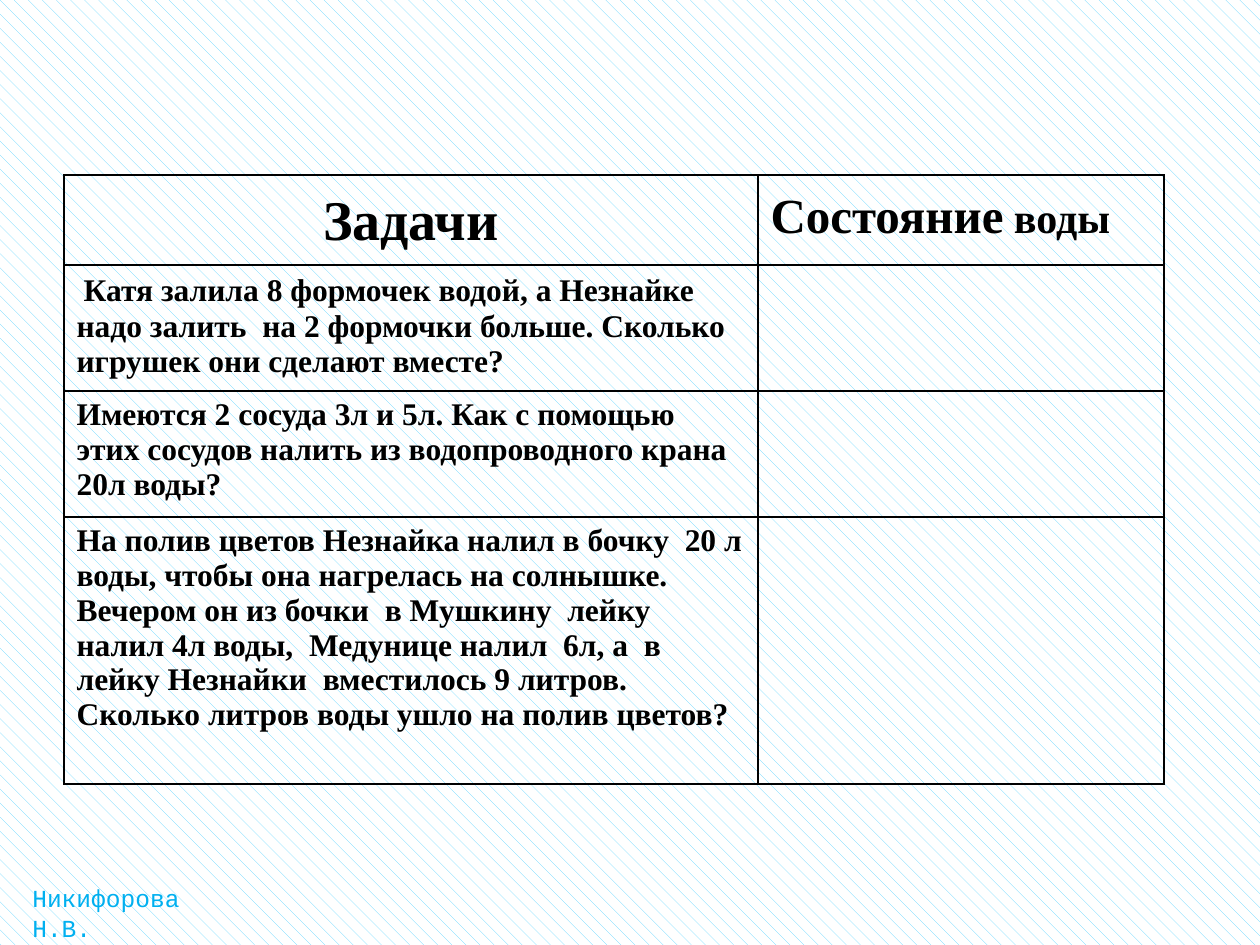
from lxml.etree import SubElement as Sub
from pptx import Presentation
from pptx.dml.color import RGBColor
from pptx.enum.dml import MSO_PATTERN
from pptx.enum.text import PP_ALIGN
from pptx.oxml import parse_xml
from pptx.oxml.ns import nsdecls, qn
from pptx.util import Pt

PX = 914400 // 126  # one px in EMU
TIMES, MONO = "Times New Roman", "Courier New"


def rgb(color):
    return RGBColor.from_string(color)


def add_run(para, text, size, face, color, bold):
    run = para.add_run()
    run.text = text
    look = {"size": Pt(size), "name": face, "bold": bold}
    for key, value in look.items():
        setattr(run.font, key, value)
    run.font.color.rgb = rgb(color)


deck = Presentation()
deck.slide_width, deck.slide_height = 1260 * PX, 945 * PX
slide = deck.slides.add_slide(deck.slide_layouts[6])

back = slide.background.fill
back.patterned()
back.pattern = MSO_PATTERN.SHINGLE
back.fore_color.rgb = rgb("5BD4FF")
back.back_color.rgb = rgb("FFFFFF")

# Author
author = slide.shapes.add_textbox(20 * PX, 877 * PX, 189 * PX, 43 * PX)
author.text_frame.word_wrap = True
add_run(author.text_frame.paragraphs[0], "Никифорова Н.В.", 14, MONO, "00B0F0", False)

# Task table: each cell holds runs of (text, size, font)
widths = [694, 406]
heights = [89, 126, 126, 267]
rows = [
    [[("Задачи", 32, TIMES)],
     [("Состояние", 28, TIMES), (" воды", 24, TIMES)]],
    [[(" ", 18, "Calibri"),
      ("Катя залила 8 формочек водой, а Незнайке надо залить  на 2 формочки "
       "больше. Сколько игрушек они сделают вместе?", 18, TIMES)], []],
    [[("Имеются 2 сосуда 3л и 5л. Как с помощью этих сосудов налить из "
       "водопроводного крана 20л воды?", 18, TIMES)], []],
    [[("На полив цветов Незнайка налил в бочку  20 л воды, чтобы она нагрелась "
       "на солнышке. Вечером он из бочки  в Мушкину  лейку налил 4л воды,  "
       "Медунице налил  6л, а  в лейку Незнайки  вместилось 9 литров. Сколько "
       "литров воды ушло на полив цветов?", 18, TIMES)], []],
]

frame = slide.shapes.add_table(len(rows), len(widths), 64 * PX, 175 * PX,
                               sum(widths) * PX, sum(heights) * PX)
table = frame.table
table.first_row = table.horz_banding = False
for col, width in zip(table.columns, widths):
    col.width = width * PX

for r, (cells, height) in enumerate(zip(rows, heights)):
    table.rows[r].height = height * PX
    for c, runs in enumerate(cells):
        cell = table.cell(r, c)
        cell.fill.background()
        props = cell._tc.get_or_add_tcPr()
        for i, side in enumerate(["lnL", "lnR", "lnT", "lnB"]):
            line = parse_xml(f'<a:{side} {nsdecls("a")} w="{Pt(1)}"/>')
            Sub(Sub(line, qn("a:solidFill")), qn("a:srgbClr"), val="000000")
            props.insert(i, line)
        para = cell.text_frame.paragraphs[0]
        if r == 0:
            para.line_spacing = 1.15
        for text, size, face in runs:
            add_run(para, text, size, face, "000000", True)

table.cell(0, 0).text_frame.paragraphs[0].alignment = PP_ALIGN.CENTER

deck.save("out.pptx")
